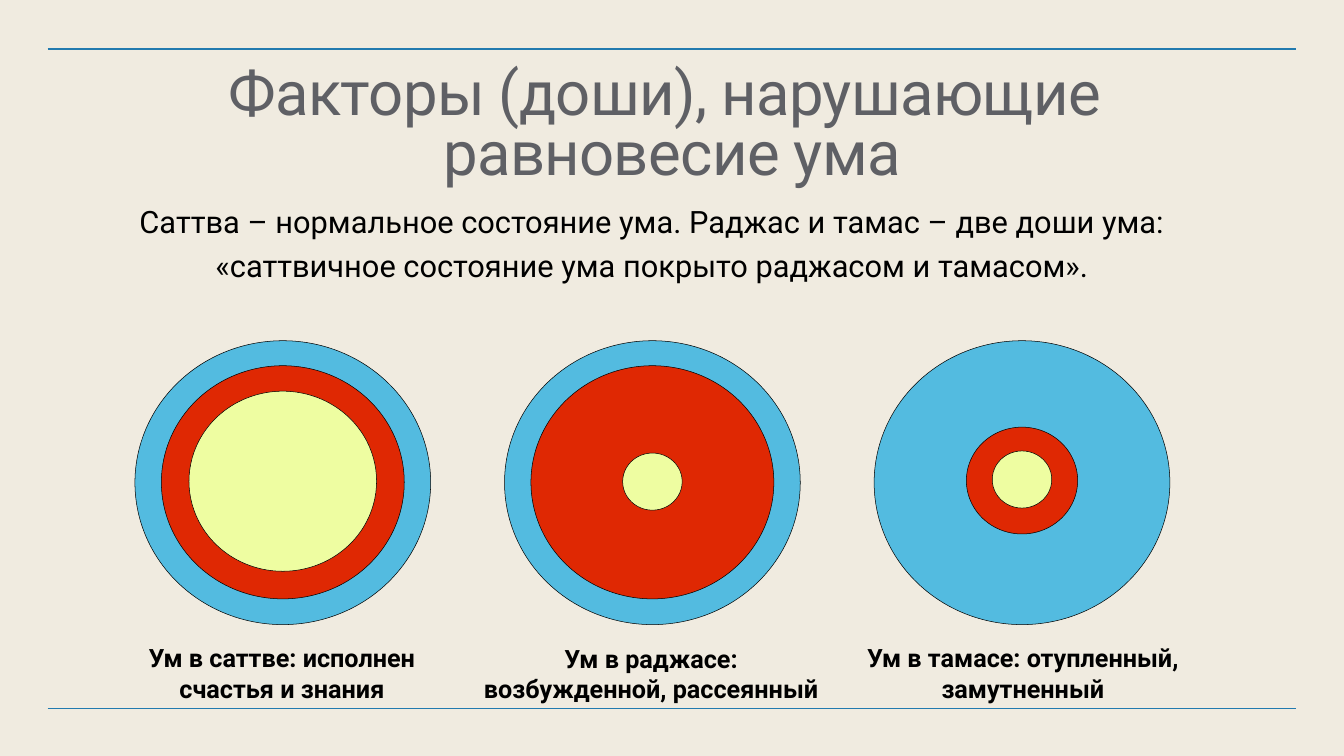
"""Build the slide on the doshas that disturb the balance of mind."""
from dataclasses import dataclass
from typing import NamedTuple

from lxml import etree
from pptx import Presentation
from pptx.dml.color import RGBColor
from pptx.enum import shapes, text
from pptx.oxml import ns
from pptx.util import Pt

CREAM = RGBColor(0xF0, 0xEB, 0xE0)
RULE_BLUE = RGBColor(0x22, 0x7A, 0xAF)
GREY = RGBColor(0x5F, 0x60, 0x65)
BLACK = RGBColor(0, 0, 0)
TAMAS_BLUE = RGBColor(0x53, 0xBB, 0xE0)
RAJAS_RED = RGBColor(0xDF, 0x28, 0x03)
SATTVA_YELLOW = RGBColor(0xEE, 0xFD, 0xA1)
FONT = "Roboto"
FIRST_CENTER, CENTER_STEP = 404, 528
RING_ASPECT = 0.96


class Ring(NamedTuple):
    color: RGBColor
    width: float
    center_y: float


class Mind(NamedTuple):
    rings: tuple[Ring, ...]
    caption: str
    caption_left: float
    caption_top: float
    caption_width: float


@dataclass
class TextStyle:
    size: float
    color: RGBColor = BLACK
    bold: bool = False
    before: float = 10
    line_spacing: float = 1.0
    inset: float = 4.5
    anchor: text.MSO_ANCHOR = text.MSO_ANCHOR.TOP
    wrap: bool = True
    grow: bool = True


TITLE = TextStyle(88, GREY, before=0, line_spacing=0.8, grow=False)
BODY = TextStyle(44, anchor=text.MSO_ANCHOR.MIDDLE, wrap=False)
CAPTION = TextStyle(36, bold=True, inset=7.2)

OUTER = Ring(TAMAS_BLUE, 422.5, 689.5)
MINDS = (
    Mind((OUTER, Ring(RAJAS_RED, 347, 689), Ring(SATTVA_YELLOW, 268, 687.5)),
         "Ум в саттве: исполнен счастья и знания", 156.2, 914.4, 493.2),
    Mind((OUTER, Ring(RAJAS_RED, 347, 689), Ring(SATTVA_YELLOW, 85, 688)),
         "Ум в раджасе: возбужденной, рассеянный", 679.7, 915.1, 501.1),
    Mind((OUTER, Ring(RAJAS_RED, 159, 686.5), Ring(SATTVA_YELLOW, 85, 685)),
         "Ум в тамасе: отупленный, замутненный", 1215.4, 914.4, 491.8),
)


def add_rule(page, y: float, weight: float) -> None:
    """Draw a horizontal rule across the slide."""
    rule = page.shapes.add_connector(
        shapes.MSO_CONNECTOR.STRAIGHT, Pt(68), Pt(y), Pt(1852), Pt(y))
    rule.line.color.rgb = RULE_BLUE
    rule.line.width = Pt(weight)
    etree.SubElement(rule._element.spPr, ns.qn("a:effectLst"))


def add_text(page, left: float, top: float, width: float, height: float,
             lines: list[str], style: TextStyle):
    """Add a centred text box with one paragraph per line."""
    box = page.shapes.add_textbox(Pt(left), Pt(top), Pt(width), Pt(height))
    frame = box.text_frame
    frame.word_wrap = style.wrap
    frame.vertical_anchor = style.anchor
    frame.auto_size = (text.MSO_AUTO_SIZE.SHAPE_TO_FIT_TEXT if style.grow
                       else text.MSO_AUTO_SIZE.NONE)
    frame.margin_left = frame.margin_right = Pt(style.inset)
    frame.margin_top = frame.margin_bottom = Pt(min(style.inset, 4.5) if style.inset < 7 else 3.6)
    for index, line in enumerate(lines):
        para = frame.add_paragraph() if index else frame.paragraphs[0]
        para.text = line
        para.alignment = text.PP_ALIGN.CENTER
        para.space_before = Pt(style.before)
        para.line_spacing = style.line_spacing
        para.font.name = FONT
        para.font.size = Pt(style.size)
        para.font.bold = style.bold
        para.font.color.rgb = style.color
    return box


def add_mind(page, mind: Mind, center_x: float) -> None:
    """Draw one group of nested rings and its caption."""
    group = page.shapes.add_group_shape()
    for ring in mind.rings:
        height = ring.width * RING_ASPECT
        disc = group.shapes.add_shape(
            shapes.MSO_SHAPE.OVAL, Pt(center_x - ring.width / 2),
            Pt(ring.center_y - height / 2), Pt(ring.width), Pt(height))
        disc.shadow.inherit = False
        disc.fill.solid()
        disc.fill.fore_color.rgb = ring.color
        disc.line.color.rgb = BLACK
        disc.line.width = Pt(0.75)
    add_text(page, mind.caption_left, mind.caption_top, mind.caption_width, 94.3,
             [mind.caption], CAPTION)


def main() -> None:
    """Assemble and save the slide."""
    deck = Presentation()
    deck.slide_width, deck.slide_height = Pt(1920), Pt(1080)
    page = deck.slides.add_slide(deck.slide_layouts[6])
    page.background.fill.solid()
    page.background.fill.fore_color.rgb = CREAM

    add_rule(page, 70, 4)
    add_rule(page, 1012, 1)
    title = add_text(page, 136, 93.6, 1648, 254,
                     ["Факторы (доши), нарушающие \vравновесие ума"], TITLE)
    for span in title.text_frame.paragraphs[0].runs:
        span.font._element.set("spc", "-90")
    for index, mind in enumerate(MINDS):
        add_mind(page, mind, FIRST_CENTER + index * CENTER_STEP)
    add_text(page, 192, 285, 1480, 124.5,
             ["Саттва – нормальное состояние ума. Раджас и тамас – две доши ума: ",
              "«саттвичное состояние ума покрыто раджасом и тамасом»."], BODY)
    deck.save("out.pptx")


if __name__ == "__main__":
    main()
